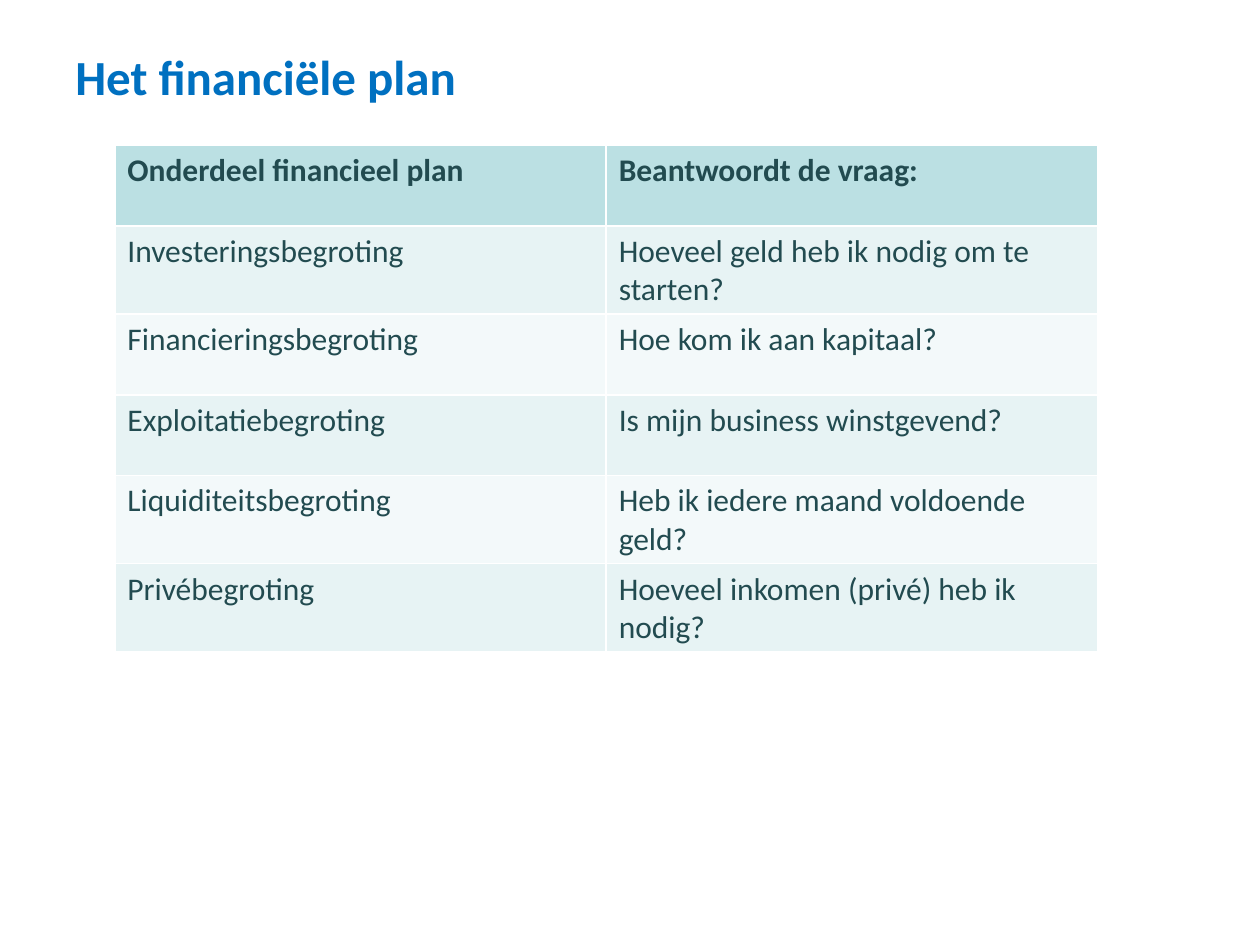
from pptx import Presentation
from pptx.dml.color import RGBColor
from pptx.enum.text import MSO_ANCHOR
from pptx.util import Pt

TITLE = "Het financiële plan"
PLAN_ROWS = [
    ("Onderdeel financieel plan", "Beantwoordt de vraag:"),
    ("Investeringsbegroting", "Hoeveel geld heb ik nodig om te starten?"),
    ("Financieringsbegroting", "Hoe kom ik aan kapitaal?"),
    ("Exploitatiebegroting", "Is mijn business winstgevend?"),
    ("Liquiditeitsbegroting", "Heb ik iedere maand voldoende geld?"),
    ("Privébegroting", "Hoeveel inkomen (privé) heb ik nodig?"),
]

BLUE = RGBColor(0x00, 0x70, 0xC0)
DARK_TEAL = RGBColor(0x22, 0x4B, 0x50)
HEADER_FILL = RGBColor(0xBB, 0xE0, 0xE3)
BAND_FILLS = (RGBColor(0xF3, 0xF9, 0xFA), RGBColor(0xE7, 0xF3, 0xF4))
COLUMN_WIDTH = 280.8
ROW_HEIGHT = 46.1


def write(frame, text, *, size=18, color=DARK_TEAL, bold=False):
    frame.word_wrap = True
    run = frame.paragraphs[0].add_run()
    run.text = text
    run.font.name = "Calibri"
    run.font.size = Pt(size)
    run.font.bold = bold
    run.font.color.rgb = color


def main():
    deck = Presentation()
    deck.slide_width, deck.slide_height = Pt(720), Pt(540)
    slide = deck.slides.add_slide(deck.slide_layouts[6])

    heading = slide.shapes.add_textbox(Pt(36), Pt(21.6), Pt(648), Pt(44)).text_frame
    heading.vertical_anchor = MSO_ANCHOR.MIDDLE
    write(heading, TITLE, size=28, color=BLUE, bold=True)

    row_count, column_count = len(PLAN_ROWS), len(PLAN_ROWS[0])
    plan = slide.shapes.add_table(
        row_count, column_count, Pt(65.6), Pt(83),
        Pt(column_count * COLUMN_WIDTH), Pt(row_count * ROW_HEIGHT),
    ).table
    for column in plan.columns:
        column.width = Pt(COLUMN_WIDTH)
    for index, (row, texts) in enumerate(zip(plan.rows, PLAN_ROWS)):
        row.height = Pt(ROW_HEIGHT)
        is_header = index == 0
        for cell, text in zip(row.cells, texts):
            cell.fill.solid()
            cell.fill.fore_color.rgb = HEADER_FILL if is_header else BAND_FILLS[index % 2]
            write(cell.text_frame, text, bold=is_header)

    deck.save("out.pptx")


if __name__ == "__main__":
    main()
